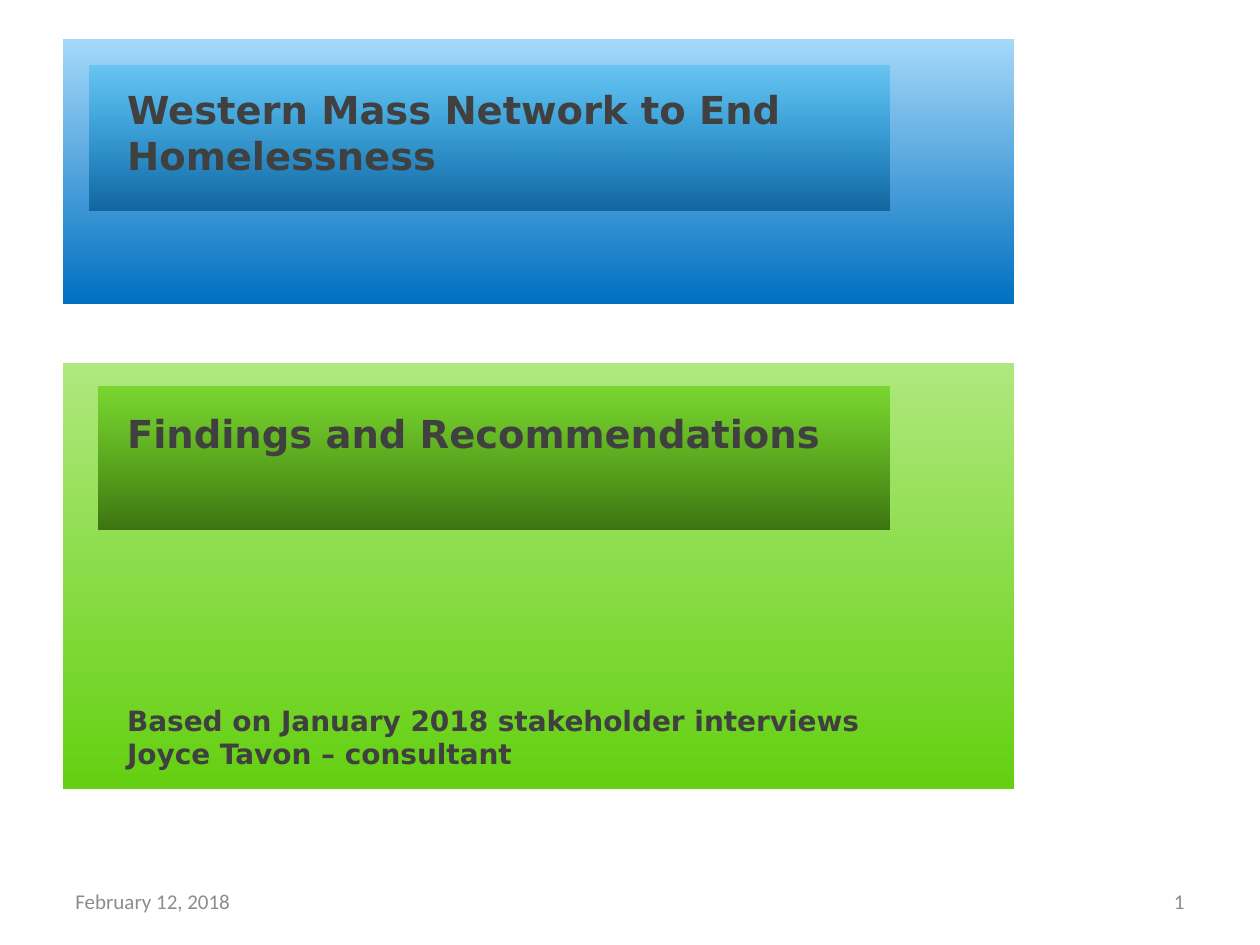
from lxml import etree
from pptx import Presentation
from pptx.dml.color import RGBColor
from pptx.enum.shapes import MSO_SHAPE
from pptx.enum.text import MSO_ANCHOR, MSO_AUTO_SIZE, PP_ALIGN
from pptx.oxml.ns import qn
from pptx.util import Pt

RECT = MSO_SHAPE.RECTANGLE
TOP, MID = MSO_ANCHOR.TOP, MSO_ANCHOR.MIDDLE
LEFT, RIGHT = PP_ALIGN.LEFT, PP_ALIGN.RIGHT
FIXED = MSO_AUTO_SIZE.NONE

HEX = {
    "sky": "A5D8F9", "blue": "0070C0", "cyan": "00B0F0", "navy": "004C84",
    "lime": "AFE87E", "green": "64D011", "moss": "326609",
    "ink": "404040", "gray": "8C8C8C",
}


def place(shape, box):
    shape.left, shape.top, shape.width, shape.height = map(Pt, box)


def panel(slide, box, *stops):
    """Draw a rectangle fading downward through (colour, opacity %) stops."""
    shape = slide.shapes.add_shape(RECT, *map(Pt, box))
    shape.shadow.inherit = False
    shape.line.fill.background()
    shape.fill.gradient()
    shape.fill.gradient_angle = 270
    for stop, (name, opacity) in zip(shape.fill.gradient_stops, stops):
        stop.color.rgb = RGBColor.from_string(HEX[name])
    colors = shape.element.spPr.iter(qn("a:srgbClr"))
    for color, (name, opacity) in zip(colors, stops):
        if opacity < 100:
            etree.SubElement(color, qn("a:alpha"), val=str(opacity * 1000))


def write(shape, lines, font="DejaVu Sans", color="ink", bold=True,
          align=LEFT, anchor=TOP):
    """Fill a shape with (text, size, space before) lines."""
    frame = shape.text_frame
    frame.word_wrap = True
    frame.auto_size = FIXED
    frame.vertical_anchor = anchor
    for i, (text, size, gap) in enumerate(lines):
        para = frame.add_paragraph() if i else frame.paragraphs[0]
        para.alignment = align
        para.space_before = Pt(gap)
        run = para.add_run()
        run.text = text
        run.font.name = font
        run.font.size = Pt(size)
        run.font.bold = bold
        run.font.color.rgb = RGBColor.from_string(HEX[color])


def label(slide, box, lines, **style):
    shape = slide.shapes.add_textbox(*map(Pt, box))
    write(shape, lines, **style)


def header(slide, x, y, w, h):
    panel(slide, (x, y, w, h), ("sky", 100), ("blue", 100))
    panel(slide, (x + 15, y + 15, w - 86, 83), ("cyan", 30), ("navy", 65))
    title = slide.shapes.title
    place(title, (x + 29.5, y + 23, 420.5, 60.5))
    write(title, [("Western Mass Network to End Homelessness", 22, 0)])
    # Bring the title in front of the panels
    slide.shapes[-1].element.addnext(title.element)


def findings(slide, x, y, w, h):
    panel(slide, (x, y, w, h), ("lime", 100), ("green", 100))
    panel(slide, (x + 20.5, y + 13.5, w - 91.5, 81.5),
          ("green", 70), ("moss", 88))
    label(slide, (x + 29.5, y + 23.5, 481, 216), [
        ("Findings and Recommendations", 22, 0),
        ("Based on January 2018 stakeholder interviews", 16, 141),
        ("Joyce Tavon – consultant", 16, 0),
    ])


def footer(slide, x, y, w, h):
    side = 168
    style = dict(font="Calibri", color="gray", bold=False, anchor=MID)
    label(slide, (x, y, side, h), [("February 12, 2018", 12, 0)], **style)
    label(slide, (x + w - side, y, side, h), [("1", 12, 0)],
          align=RIGHT, **style)


def main():
    deck = Presentation()
    deck.slide_width, deck.slide_height = Pt(720), Pt(540)
    slide = deck.slides.add_slide(deck.slide_layouts[5])
    header(slide, 36, 22.5, 543.5, 151)
    findings(slide, 36, 207.5, 543.5, 243.5)
    footer(slide, 36, 500.5, 648, 28.75)
    deck.save("out.pptx")


if __name__ == "__main__":
    main()
